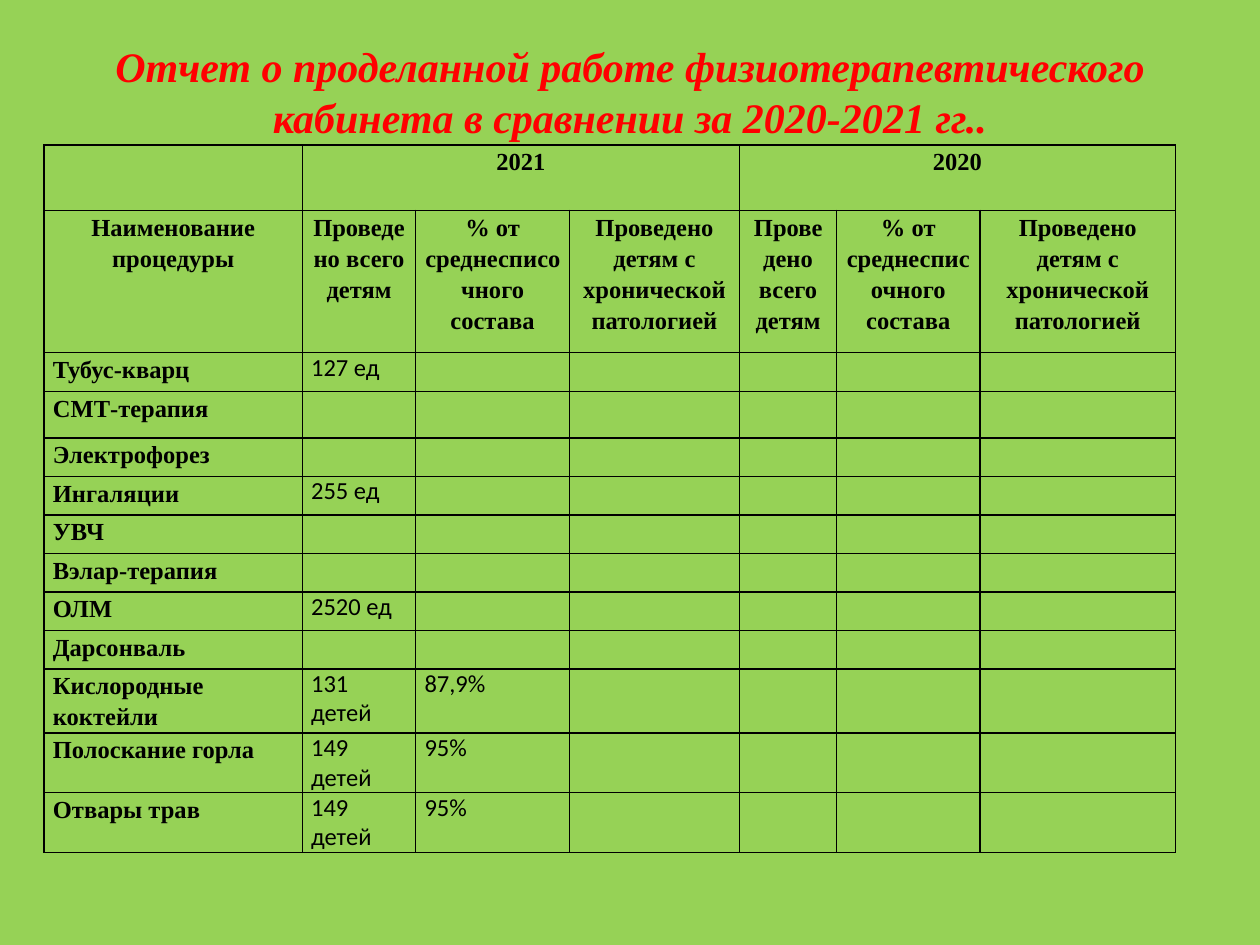
from dataclasses import dataclass

from lxml.etree import SubElement
from pptx import Presentation
from pptx.dml.color import RGBColor
from pptx.enum.text import MSO_ANCHOR, PP_ALIGN
from pptx.oxml.ns import qn
from pptx.util import Inches, Pt


@dataclass(frozen=True)
class Theme:
    background: str = "96D256"
    title: str = "FF0000"
    ink: str = "000000"
    heading_font: str = "Times New Roman"
    data_font: str = "Calibri"
    title_size: int = 24
    table_size: int = 14
    border_width: int = 1


THEME = Theme()
TITLE = "Отчет о проделанной работе физиотерапевтического кабинета в сравнении за 2020-2021 гг.."
YEARS = ["2021", "2020"]
MEASURES = [
    "Проведено всего детям",
    "% от среднесписочного состава",
    "Проведено детям с хронической патологией",
]
PROCEDURES = [
    ("Тубус-кварц", "127 ед"),
    ("СМТ-терапия",),
    ("Электрофорез",),
    ("Ингаляции", "255 ед"),
    ("УВЧ",),
    ("Вэлар-терапия",),
    ("ОЛМ", "2520 ед"),
    ("Дарсонваль",),
    ("Кислородные коктейли", "131 детей", "87,9%"),
    ("Полоскание горла", "149 детей", "95%"),
    ("Отвары трав", "149 детей", "95%"),
]
COLUMN_WIDTHS = [2.05, 0.9, 1.22, 1.35, 0.77, 1.14, 1.55]
ROW_HEIGHTS = [0.52, 1.13, 0.3, 0.37] + [0.3] * 6 + [0.51, 0.45, 0.45]

HEADING = {"name": THEME.heading_font, "size": Pt(THEME.table_size), "bold": True}
DATA = {"name": THEME.data_font, "size": Pt(THEME.table_size), "bold": False}
TITLE_FORMAT = {
    "name": THEME.heading_font,
    "size": Pt(THEME.title_size),
    "bold": True,
    "italic": True,
}


def write_text(frame, text, font_format, color, align=PP_ALIGN.LEFT, spacing=1.0):
    para = frame.paragraphs[0]
    para.alignment = align
    para.line_spacing = spacing
    span = para.add_run()
    span.text = text
    for name, value in font_format.items():
        setattr(span.font, name, value)
    span.font.color.rgb = RGBColor.from_string(color)


def add_title(page):
    title = page.shapes.title
    place = {"left": 0.5, "top": 0.3, "width": 9, "height": 0.85}
    for name, value in place.items():
        setattr(title, name, Inches(value))
    title.text_frame.word_wrap = True
    title.text_frame.vertical_anchor = MSO_ANCHOR.MIDDLE
    write_text(title.text_frame, TITLE, TITLE_FORMAT, THEME.title, PP_ALIGN.CENTER)


def style_cell(cell):
    margins = {"left": 0.07, "top": 0, "right": 0.07, "bottom": 0}
    for side, value in margins.items():
        setattr(cell, f"margin_{side}", Inches(value))
    properties = cell._tc.get_or_add_tcPr()
    for edge in ("a:lnL", "a:lnR", "a:lnT", "a:lnB"):
        line = SubElement(properties, qn(edge), w=str(Pt(THEME.border_width)))
        fill = SubElement(line, qn("a:solidFill"))
        SubElement(fill, qn("a:srgbClr"), val=THEME.ink)
    cell.fill.background()


def write_heading(cell, text, align=PP_ALIGN.CENTER):
    write_text(cell.text_frame, text, HEADING, THEME.ink, align, 1.15)


def add_report_table(page):
    frame = page.shapes.add_table(
        len(ROW_HEIGHTS), len(COLUMN_WIDTHS), Inches(0.35), Inches(1.15),
        Inches(sum(COLUMN_WIDTHS)), Inches(sum(ROW_HEIGHTS)),
    )
    table = frame.table
    table.first_row = table.horz_banding = False
    for column, width in zip(table.columns, COLUMN_WIDTHS):
        column.width = Inches(width)
    for row, height in zip(table.rows, ROW_HEIGHTS):
        row.height = Inches(height)
    for cell in table.iter_cells():
        style_cell(cell)

    for index, year in enumerate(YEARS):
        first = 1 + index * len(MEASURES)
        year_cell = table.cell(0, first)
        year_cell.merge(table.cell(0, first + len(MEASURES) - 1))
        write_heading(year_cell, year)
    for column, text in enumerate(["Наименование процедуры"] + MEASURES * len(YEARS)):
        write_heading(table.cell(1, column), text)
    for row, (procedure, *values) in enumerate(PROCEDURES, start=2):
        write_heading(table.cell(row, 0), procedure, PP_ALIGN.LEFT)
        for column, value in enumerate(values, start=1):
            write_text(table.cell(row, column).text_frame, value, DATA, THEME.ink)


def main():
    deck = Presentation()
    deck.slide_width, deck.slide_height = Inches(10), Inches(7.5)
    page = deck.slides.add_slide(deck.slide_layouts[5])
    page.background.fill.solid()
    page.background.fill.fore_color.rgb = RGBColor.from_string(THEME.background)
    add_title(page)
    add_report_table(page)
    deck.save("out.pptx")


if __name__ == "__main__":
    main()
